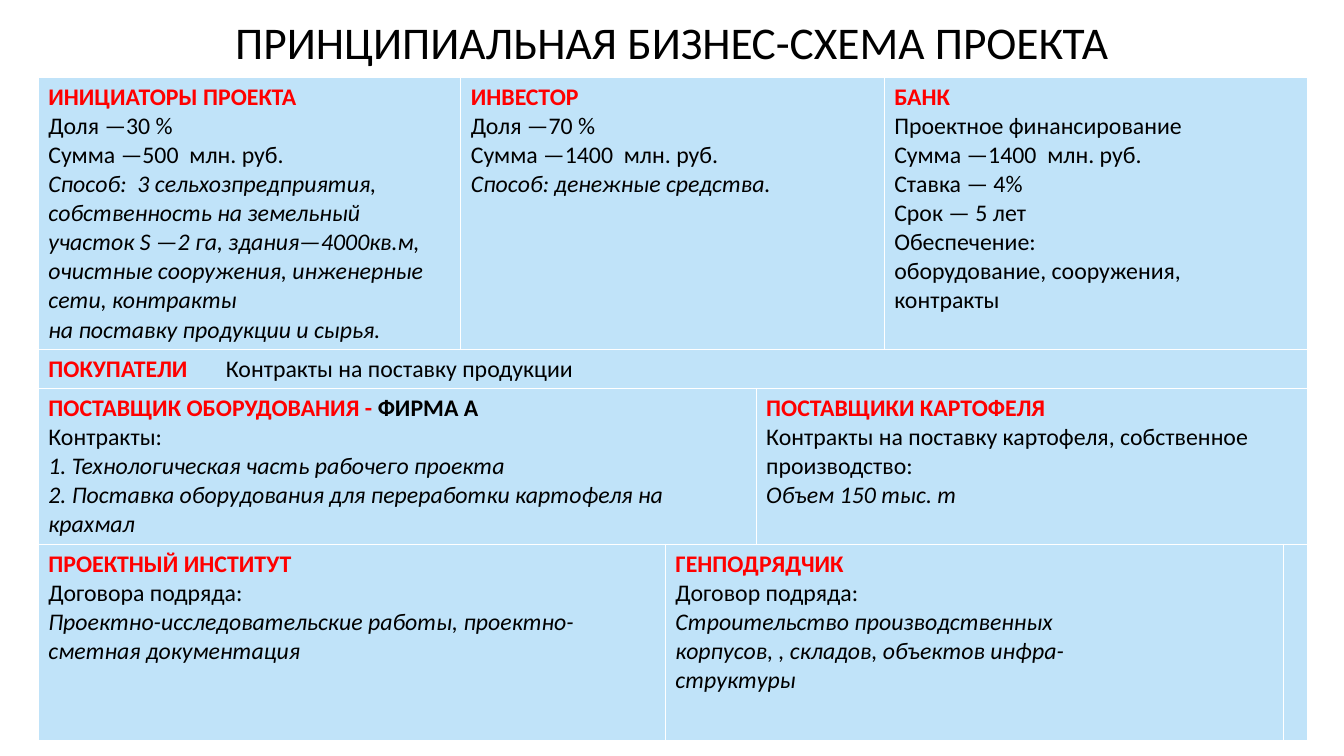
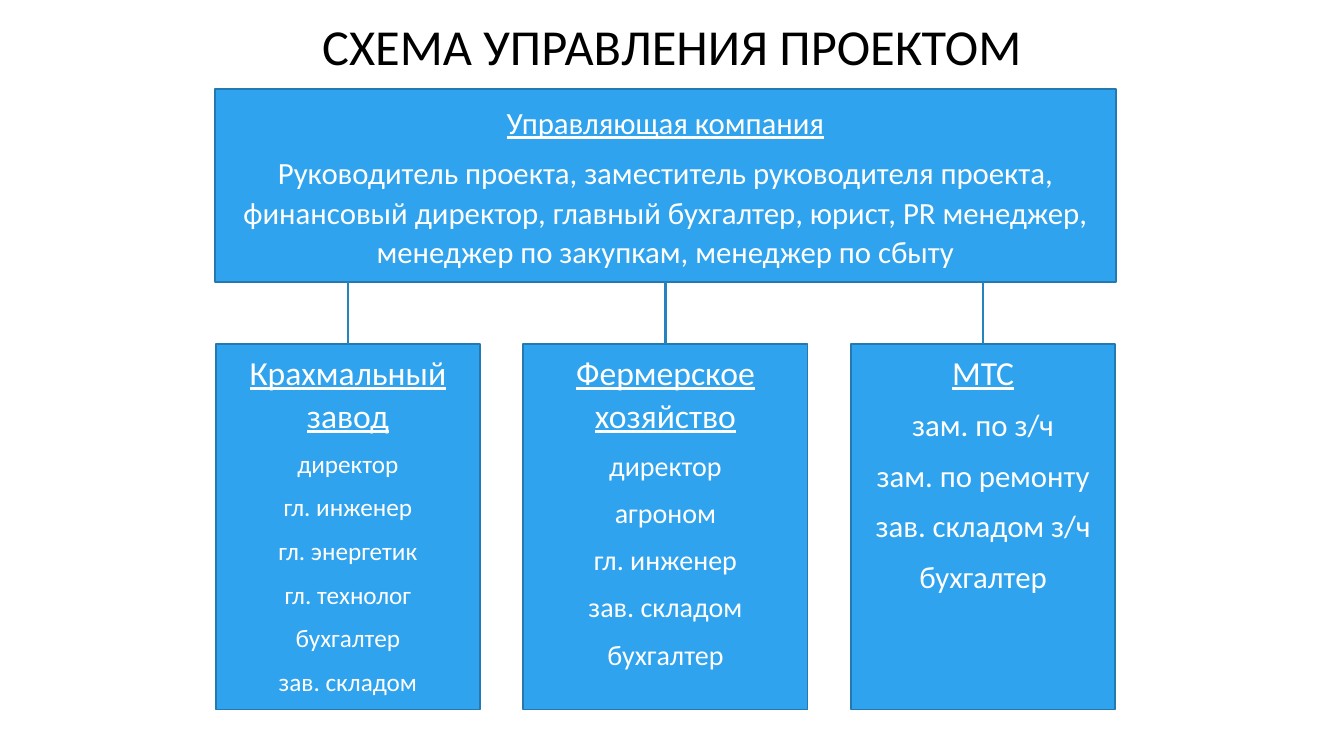
from lxml import etree
from pptx import Presentation
from pptx.dml.color import RGBColor
from pptx.enum import shapes, text
from pptx.oxml import ns
from pptx.util import Inches, Pt

# Shared look
FONT = "Calibri"
BLACK = RGBColor(0x00, 0x00, 0x00)
WHITE = RGBColor(0xFF, 0xFF, 0xFF)
RED = RGBColor(0xFF, 0x00, 0x00)
BLUE = RGBColor(0x2F, 0xA3, 0xEE)
OUTLINE = RGBColor(0x23, 0x79, 0xB0)
LINK = RGBColor(0x26, 0x83, 0xBF)
CELL_OPACITY = 30
CELL_SIZE = 17

# Business scheme: column widths, row heights and cells
COLUMNS = [4.19, 2.03, 0.9, 1.27, 3.96, 0.23]
ROWS = [2.58, 0.37, 1.48, 1.95]
# (row, first column, last column, heading, heading tail, plain lines, italic lines)
PARTIES = [
    (0, 0, 0, "ИНИЦИАТОРЫ ПРОЕКТА", "",
     ["Доля —30 %", "Сумма —500  млн. руб."],
     ["Способ:  3 сельхозпредприятия, собственность на земельный участок "
      "S —2 га, здания—4000кв.м, очистные сооружения, инженерные сети, контракты",
      "на поставку продукции и сырья."]),
    (0, 1, 3, "ИНВЕСТОР", "",
     ["Доля —70 %", "Сумма —1400  млн. руб."],
     ["Способ: денежные средства."]),
    (0, 4, 5, "БАНК", "",
     ["Проектное финансирование", "Сумма —1400  млн. руб.", "Ставка — 4%",
      "Срок — 5 лет", "Обеспечение:", "оборудование, сооружения,", "контракты"], []),
    (2, 0, 2, "ПОСТАВЩИК ОБОРУДОВАНИЯ - ", "ФИРМА А",
     ["Контракты:"],
     ["1. Технологическая часть рабочего проекта",
      "2. Поставка оборудования для переработки картофеля на крахмал"]),
    (2, 3, 5, "ПОСТАВЩИКИ КАРТОФЕЛЯ", "",
     ["Контракты на поставку картофеля, собственное производство:"],
     ["Объем 150 тыс. т"]),
    (3, 0, 1, "ПРОЕКТНЫЙ ИНСТИТУТ", "",
     ["Договора подряда:"],
     ["Проектно-исследовательские работы, проектно-", "сметная документация"]),
    (3, 2, 4, "ГЕНПОДРЯДЧИК", "",
     ["Договор подряда:"],
     ["Строительство производственных", "корпусов, , складов, объектов инфра-",
      "структуры"]),
]

# Management scheme: left, width, heading, size of the positions, positions
DIVISION_TOP, DIVISION_HEIGHT = 3.41, 3.63
DIVISIONS = [
    (2.14, 2.62, "Крахмальный завод", 18,
     ["директор", "гл. инженер", "гл. энергетик", "гл. технолог", "бухгалтер",
      "зав. складом"]),
    (5.19, 2.82, "Фермерское хозяйство", 20,
     ["директор", "агроном", "гл. инженер", "зав. складом", "бухгалтер"]),
    (8.44, 2.62, "МТС", 22,
     ["зам. по з/ч", "зам. по ремонту", "зав. складом з/ч", "бухгалтер"]),
]


def style(font, size, color, bold=False, italic=False, underline=False):
    font.name = FONT
    font.size = Pt(size)
    font.color.rgb = color
    font.bold = bold
    font.italic = italic
    font.underline = underline


def next_paragraph(frame):
    """Return the still empty first paragraph, or a new one."""
    first = frame.paragraphs[0]
    return frame.add_paragraph() if first.runs else first


def add_titled_slide(prs, caption, top, height, size):
    slide = prs.slides.add_slide(prs.slide_layouts[5])
    title = slide.shapes.title
    title.left, title.top = Inches(1), Inches(top)
    title.width, title.height = Inches(11.33), Inches(height)
    frame = title.text_frame
    frame.text = caption
    frame.word_wrap = True
    frame.auto_size = text.MSO_AUTO_SIZE.NONE
    frame.vertical_anchor = text.MSO_ANCHOR.MIDDLE
    heading = frame.paragraphs[0]
    heading.alignment = text.PP_ALIGN.CENTER
    heading.line_spacing = 0.9
    style(heading.font, size, BLACK)
    return slide


# Table parts
def tint(cell):
    cell.fill.solid()
    cell.fill.fore_color.rgb = BLUE
    color = cell.fill._xPr.find(".//" + ns.qn("a:srgbClr"))
    etree.SubElement(color, ns.qn("a:alpha"), val=str(CELL_OPACITY * 1000))


def add_cell_line(frame, line, color=BLACK, **look):
    paragraph = next_paragraph(frame)
    paragraph.add_run().text = line
    style(paragraph.font, CELL_SIZE, color, **look)
    return paragraph


def add_tab_stop(paragraph, position):
    stops = etree.SubElement(paragraph._p.get_or_add_pPr(), ns.qn("a:tabLst"))
    etree.SubElement(stops, ns.qn("a:tab"), pos=str(Inches(position)), algn="l")


def merge(table, row, first, last):
    cell = table.cell(row, first)
    if last > first:
        cell.merge(table.cell(row, last))
    return cell.text_frame


def add_parties_table(slide):
    table = slide.shapes.add_table(
        len(ROWS), len(COLUMNS), Inches(0.38), Inches(0.77),
        Inches(sum(COLUMNS)), Inches(sum(ROWS))).table
    table.horz_banding = False
    for column, width in zip(table.columns, COLUMNS):
        column.width = Inches(width)
    for row, height in zip(table.rows, ROWS):
        row.height = Inches(height)
    for cell in table.iter_cells():
        tint(cell)
        cell.text_frame.paragraphs[0].font.size = Pt(CELL_SIZE)

    for row, first, last, heading, tail, plain, italic in PARTIES:
        frame = merge(table, row, first, last)
        top_line = add_cell_line(frame, heading, RED, bold=True)
        if tail:
            run = top_line.add_run()
            run.text = tail
            run.font.color.rgb = BLACK
        for line in plain:
            add_cell_line(frame, line)
        for line in italic:
            add_cell_line(frame, line, italic=True)

    # Buyers: heading and contracts on one line
    buyers = merge(table, 1, 0, len(COLUMNS) - 1).paragraphs[0]
    add_tab_stop(buyers, 1.76)
    for words, color, bold in (("ПОКУПАТЕЛИ\t", RED, True),
                               ("Контракты на поставку продукции", BLACK, False)):
        run = buyers.add_run()
        run.text = words
        style(run.font, CELL_SIZE, color, bold=bold)


# Organisation chart parts
def add_unit(slide, left, top, width, height, heading, heading_size, lines, size,
             anchor=text.MSO_ANCHOR.TOP):
    unit = slide.shapes.add_shape(
        shapes.MSO_SHAPE.RECTANGLE,
        Inches(left), Inches(top), Inches(width), Inches(height))
    unit.shadow.inherit = False
    unit.fill.solid()
    unit.fill.fore_color.rgb = BLUE
    unit.line.color.rgb = OUTLINE
    unit.line.width = Pt(1.25)
    frame = unit.text_frame
    frame.word_wrap = True
    frame.vertical_anchor = anchor
    for index, line in enumerate([heading] + lines):
        paragraph = next_paragraph(frame)
        paragraph.add_run().text = line
        paragraph.alignment = text.PP_ALIGN.CENTER
        paragraph.line_spacing = 1.07
        paragraph.space_after = Pt(8)
        style(paragraph.font, size if index else heading_size, WHITE,
              underline=index == 0)
    return unit


def add_link(slide, upper, lower):
    """Drop a vertical line from the upper unit to the top of the lower one."""
    center = lower.left + lower.width // 2
    bottom = upper.top + upper.height
    link = slide.shapes.add_connector(
        shapes.MSO_CONNECTOR.STRAIGHT, center, bottom, center, lower.top)
    if abs(center - upper.left - upper.width // 2) < Inches(0.01):
        link.begin_connect(upper, 2)
    link.end_connect(lower, 0)
    link.line.color.rgb = LINK
    link.line.width = Pt(1.5)
    etree.SubElement(link._element.spPr, ns.qn("a:effectLst"))


def add_management_chart(slide):
    company = add_unit(
        slide, 2.13, 0.88, 8.94, 1.92, "Управляющая компания", 22,
        ["Руководитель проекта, заместитель руководителя проекта, финансовый "
         "директор, главный бухгалтер, юрист, PR менеджер, менеджер по закупкам, "
         "менеджер по сбыту"], 22, text.MSO_ANCHOR.MIDDLE)
    for left, width, heading, size, positions in DIVISIONS:
        division = add_unit(slide, left, DIVISION_TOP, width, DIVISION_HEIGHT,
                            heading, 24, positions, size)
        add_link(slide, company, division)


def main():
    prs = Presentation()
    prs.slide_width, prs.slide_height = Inches(13.33), Inches(7.5)
    add_parties_table(add_titled_slide(
        prs, "ПРИНЦИПИАЛЬНАЯ БИЗНЕС-СХЕМА ПРОЕКТА", 0.12, 0.65, 32.4))
    add_management_chart(add_titled_slide(
        prs, "СХЕМА УПРАВЛЕНИЯ ПРОЕКТОМ", 0.09, 0.8, 36))
    prs.save("out.pptx")


if __name__ == "__main__":
    main()
